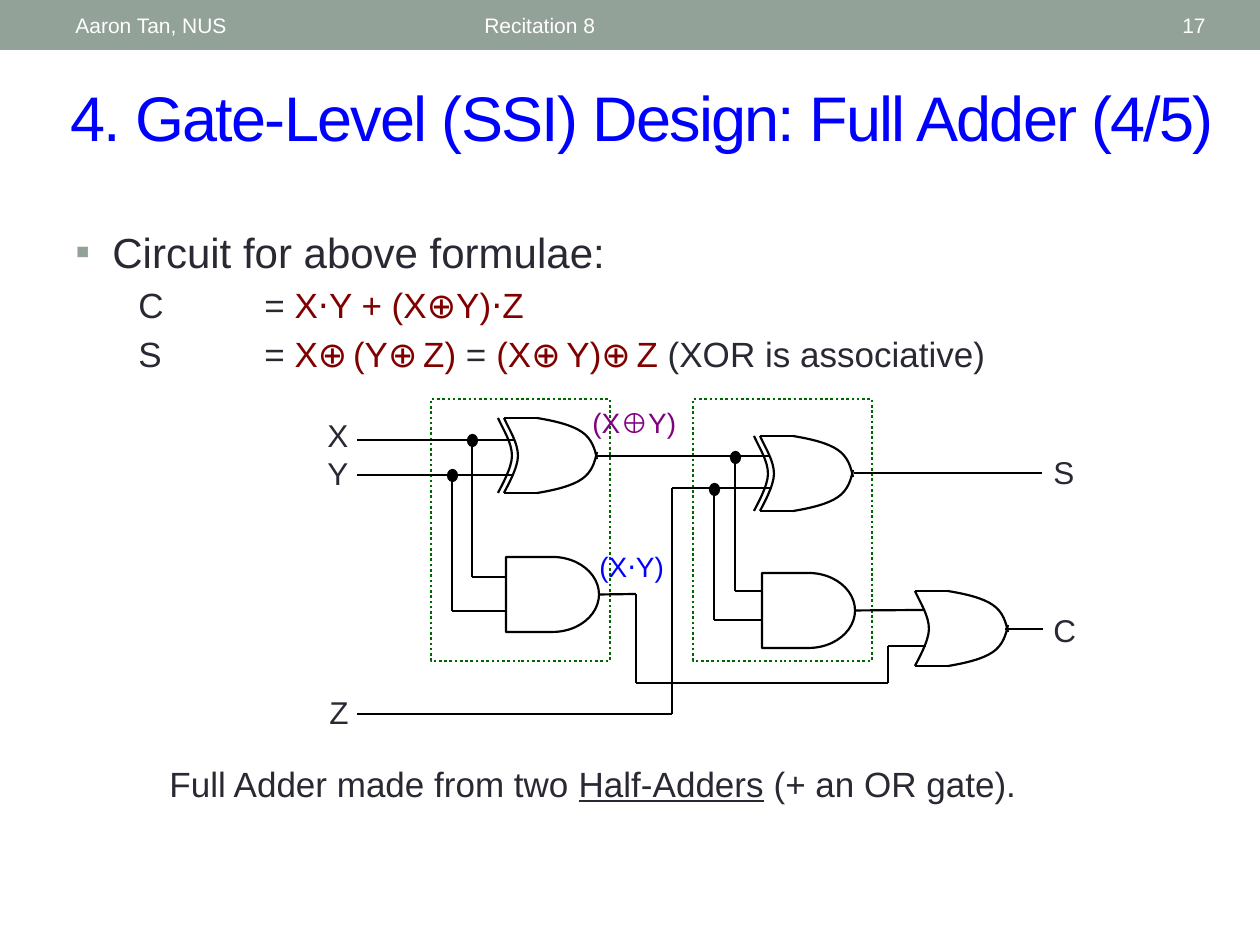
from itertools import groupby

from lxml.etree import SubElement
from pptx import Presentation
from pptx.dml.color import RGBColor
from pptx.enum.dml import MSO_LINE
from pptx.enum.lang import MSO_LANGUAGE_ID as LANGUAGE
from pptx.enum.shapes import MSO_CONNECTOR as LINK, MSO_SHAPE as SHAPE
from pptx.enum.text import MSO_ANCHOR as ANCHOR, PP_ALIGN as ALIGN
from pptx.oxml import parse_xml
from pptx.oxml.ns import nsdecls, qn
from pptx.util import Pt

PX = 914400 / 126
FONT = "Arial"
WHITE = RGBColor(0xFF, 0xFF, 0xFF)
BLACK = RGBColor(0, 0, 0)
SAGE = RGBColor(0x93, 0xA2, 0x99)
INK = RGBColor(0x29, 0x29, 0x34)
BLUE = RGBColor(0, 0, 0xFF)
MAROON = RGBColor(0x80, 0, 0)
PURPLE = RGBColor(0x80, 0, 0x80)
GREEN = RGBColor(0, 0x66, 0)

# Gate outline as Bezier control points, from the gate's top left corner
GATE_WIDTH, GATE_HEIGHT, GATE_FLAT = 93, 75, 33
BACK_ARC = [(0, 0), (6, 13), (14, 25), (14, 38), (14, 50), (3, 69), (0, 75)]
TOP_ARC = [(33, 0), (51, 3), (68, 7), (78, 14), (88, 21), (91, 31), (93, 41)]
BOTTOM_ARC = [(x, GATE_HEIGHT - y) for x, y in TOP_ARC]


def px(*lengths):
    return [round(length * PX) for length in lengths]


def add_span(para, text, size, color, underline=None):
    span = para.add_run()
    span.text = text
    font = span.font
    font.name, font.size, font.underline = FONT, Pt(size), underline
    font.color.rgb = color
    return span


def add_math(para, text, size, color):
    """Add an expression, setting each ⊕ as a span of its own."""
    for is_xor, letters in groupby(text, lambda letter: letter == "⊕"):
        span = add_span(para, "".join(letters), size, color)
        if is_xor:
            span.font.language_id = LANGUAGE.ENGLISH_UK


def add_text(page, box, lines, anchor=ANCHOR.TOP, align=ALIGN.LEFT):
    """Add a text box; each line is a list of spans (text, size, color[, underline])."""
    frame = page.shapes.add_textbox(*px(*box)).text_frame
    frame.word_wrap, frame.vertical_anchor = True, anchor
    for index, spans in enumerate(lines):
        para = frame.paragraphs[0] if index == 0 else frame.add_paragraph()
        para.alignment = align
        for span in spans:
            add_span(para, *span)
    return frame


def add_box(page, kind, box, fill=None, line=None, width=1.25):
    shape = page.shapes.add_shape(kind, *px(*box))
    shape.shadow.inherit = False
    if fill is None:
        shape.fill.background()
    else:
        shape.fill.solid()
        shape.fill.fore_color.rgb = fill
    if line is None:
        shape.line.fill.background()
    else:
        shape.line.color.rgb, shape.line.width = line, Pt(width)
    return shape


def add_wire(page, *points, source=None):
    """Join the points by straight wires; a source shape feeds the first from its right."""
    for index, (start, end) in enumerate(zip(points, points[1:])):
        wire = page.shapes.add_connector(LINK.STRAIGHT, *px(*start, *end))
        wire.line.color.rgb, wire.line.width = BLACK, Pt(1.25)
        wire._element.spPr.append(parse_xml(f"<a:effectLst {nsdecls('a')}/>"))
        if source is not None and index == 0:
            wire.begin_connect(source, 3)


def add_curve(page, left, top, controls):
    """Draw joined cubic Bezier curves as one open outline."""
    points = [px(left + x, top + y) for x, y in controls]
    builder = page.shapes.build_freeform(*points[0])
    builder.add_line_segments(points[1:], close=False)
    curve = builder.convert_to_shape()
    curve.shadow.inherit = False
    curve.fill.background()
    curve.line.color.rgb, curve.line.width = BLACK, Pt(1.25)
    # Turn each three straight segments into one cubic curve
    outline = next(curve._element.iter(qn("a:path")))
    segments = outline.findall(qn("a:lnTo"))
    for first in range(0, len(segments), 3):
        cubic = SubElement(outline, qn("a:cubicBezTo"))
        for segment in segments[first:first + 3]:
            cubic.append(segment[0])
            outline.remove(segment)


def add_or_gate(page, left, top, exclusive=False):
    for arc in (BACK_ARC, TOP_ARC, BOTTOM_ARC):
        add_curve(page, left, top, arc)
    for y in (top, top + GATE_HEIGHT):
        add_wire(page, (left, y), (left + GATE_FLAT, y))
    if exclusive:
        add_curve(page, left - 6, top, BACK_ARC)


def add_half_adder(page, box, xor, both, taps, pins):
    """Draw an XOR above an AND; each tap drops from an XOR input to an AND pin."""
    frame = add_box(page, SHAPE.RECTANGLE, box, line=GREEN, width=1.5)
    frame.line.dash_style = MSO_LINE.ROUND_DOT
    add_or_gate(page, *xor, exclusive=True)
    and_gate = add_box(page, SHAPE.FLOWCHART_DELAY, (*both, GATE_WIDTH, GATE_HEIGHT), line=BLACK)
    for (x, y), pin in zip(taps, pins):
        add_wire(page, (x, y), (x, pin), (both[0], pin))
        add_box(page, SHAPE.OVAL, (x - 4, y - 5, 9, 11), BLACK, BLACK)
    return and_gate


def add_header(page, box):
    left, top, width, height = box
    add_box(page, SHAPE.RECTANGLE, box, SAGE)
    for x, span, text, align in ((63, 399, "Aaron Tan, NUS", ALIGN.LEFT),
                                 (472, 567, "Recitation 8", ALIGN.LEFT),
                                 (1099, 119, "17", ALIGN.RIGHT)):
        add_text(page, (left + x, top + 3, span, height - 5),
                 [[(text, 12, WHITE)]], ANCHOR.MIDDLE, align)


def add_title(page, box):
    title = page.shapes.title
    title.left, title.top, title.width, title.height = px(*box)
    frame = title.text_frame
    frame.vertical_anchor = ANCHOR.MIDDLE
    para = frame.paragraphs[0]
    para.alignment = ALIGN.LEFT
    span = add_span(para, "4. Gate-Level (SSI) Design: Full Adder (4/5)", 36, BLUE)
    span.font._element.set("spc", "-100")


def set_indent(para, margin, indent):
    props = para._p.get_or_add_pPr()
    props.set("marL", str(px(margin)[0]))
    props.set("indent", str(px(indent)[0]))
    return props


def add_formulae(page, box):
    frame = add_text(page, box, [
        [("Circuit for above formulae:", 24, INK)],
        [("C\t= ", 20, INK), ("X⋅Y + (X⊕Y)⋅Z", 20, MAROON)],
        [("S\t= ", 20, INK)]])
    heading, *formulae = frame.paragraphs
    for text, color in (("X⊕(Y⊕Z)", MAROON), (" = ", INK), ("(X⊕Y)⊕Z ", MAROON),
                        ("(XOR is associative)", INK)):
        add_math(formulae[1], text, 20, color)
    heading.space_before = Pt(4.8)
    props = set_indent(heading, 37, -37)
    for tag in (f'<a:buClr {nsdecls("a")}><a:srgbClr val="{SAGE}"/></a:buClr>',
                f'<a:buFont {nsdecls("a")} typeface="{FONT}"/>',
                f'<a:buChar {nsdecls("a")} char="▪"/>'):
        props.append(parse_xml(tag))
    for para in formulae:
        para.space_before = Pt(4)
        # The tab after the name reaches the hanging margin
        set_indent(para, 189, -126).set("defTabSz", str(px(189)[0]))


def add_circuit(page, box):
    left, top, width, height = box

    def at(x, y):
        return left + x, top + y

    # Half adders and the final OR gate
    first_and = add_half_adder(page, (*at(116, 0), 179, 262), at(189, 19), at(191, 158),
                               [at(157, 41), at(137, 76)], [top + 178, top + 212])
    second_and = add_half_adder(page, (*at(378, 0), 179, 262), at(445, 37), at(447, 174),
                                [at(420, 58), at(399, 90)], [top + 192, top + 221])
    add_or_gate(page, *at(600, 192))

    # Wires between terminals and gates
    add_wire(page, at(42, 41), at(199, 41))
    add_wire(page, at(42, 76), at(199, 76))
    add_wire(page, at(281, 57), at(455, 57))
    add_wire(page, at(42, 315), at(357, 315), at(357, 89), at(455, 89))
    add_wire(page, at(539, 74), at(727, 74))
    add_wire(page, at(284, 195), at(321, 195), at(321, 284), at(573, 284),
             at(573, 247), at(611, 247), source=first_and)
    add_wire(page, at(540, 211), at(608, 211), source=second_and)
    add_wire(page, at(690, 230), at(728, 230))

    # Signal names
    for x, y, names, size, color in ((0, 11, "XY", 18, INK), (2, 288, "Z", 18, INK),
                                     (726, 48, "S", 18, INK), (726, 206, "C", 18, INK),
                                     (265, 0, ["(X⊕Y)"], 16, PURPLE),
                                     (272, 144, ["(X⋅Y)"], 16, BLUE)):
        frame = add_text(page, (*at(x, y), 53 if color == INK else 113, 48), [[] for name in names])
        for para, name in zip(frame.paragraphs, names):
            add_math(para, name, size, color)


def build():
    deck = Presentation()
    deck.slide_width, deck.slide_height = px(1260, 945)
    page = deck.slides.add_slide(deck.slide_layouts[5])
    add_header(page, (0, 0, 1260, 50))
    add_title(page, (58, 72, 1187, 88))
    add_formulae(page, (63, 220, 1124, 170))
    add_circuit(page, (315, 399, 779, 336))
    add_text(page, (157, 756, 914, 73), [[("Full Adder made from two ", 20, INK),
                                          ("Half-Adders", 20, INK, True),
                                          (" (+ an OR gate).", 20, INK)]])
    deck.save("out.pptx")


if __name__ == "__main__":
    build()
